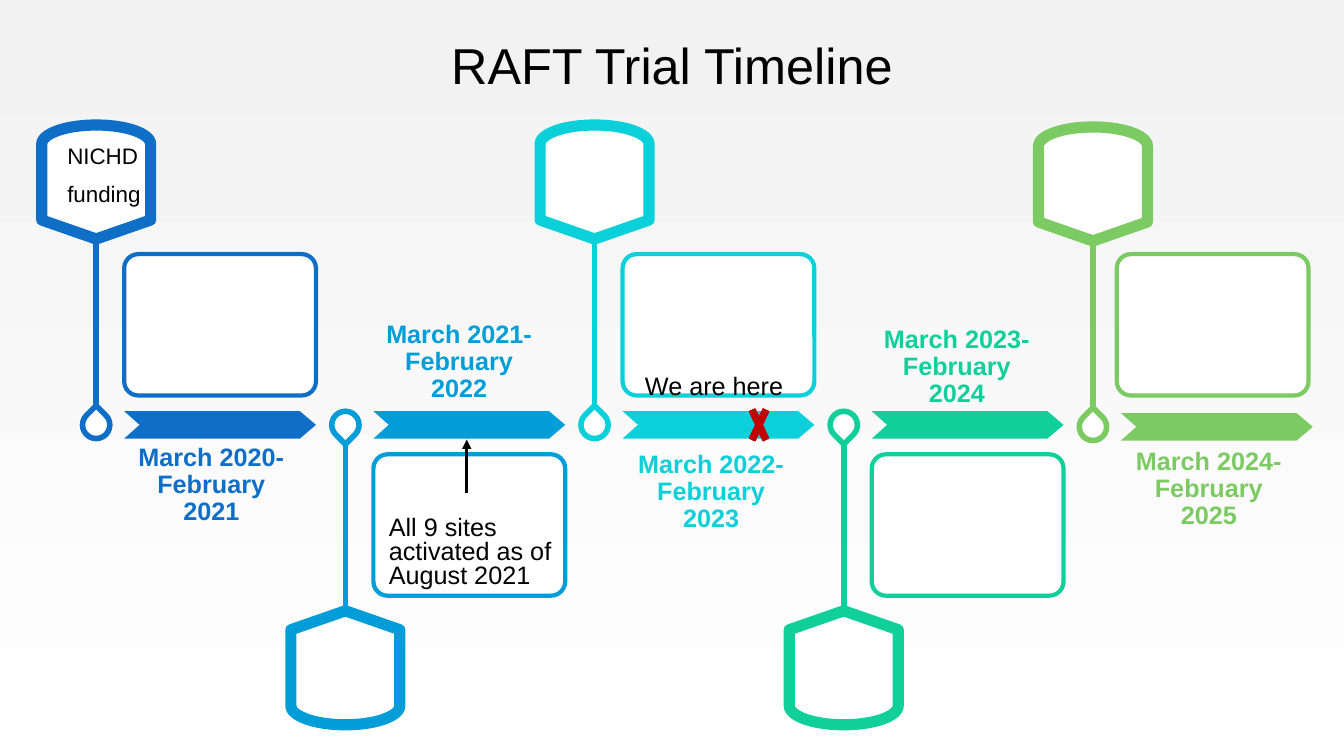
"""Build the trial timeline slide."""
from dataclasses import dataclass

from pptx import Presentation
from pptx import util as u
from pptx.dml.color import RGBColor
from pptx.enum import shapes, text
from pptx.oxml import ns
from lxml import etree

Pt = u.Pt


@dataclass(frozen=True)
class Theme:
    """Colours, font and type sizes of the slide."""
    font: str = "Arial"
    ink: str = "000000"
    paper: str = "FFFFFF"
    shade: str = "F2F2F2"
    alert: str = "C00000"
    title: float = 36
    body: float = 18
    small: float = 16


@dataclass(frozen=True)
class Period:
    """One year of the trial, with the nudges of its parts in points."""
    label: str
    color: str
    label_left: float
    label_top: float
    drop: float = 0
    card_shift: float = 0


THEME = Theme()
PERIODS = [
    Period("March 2020-February 2021", "0F6FC6", 20, 10.5),
    Period("March 2021-February 2022", "009DD9", 19, -77.5),
    Period("March 2022- February 2023", "0BD0D9", 21, 15.5),
    Period("March 2023-February 2024", "10CF9B", 18.5, -74),
    Period("March 2024-February 2025", "7CCA62", 20.5, 13.5, 1.4, -3),
]
FIRST_AXIS, PITCH, BAND_Y = 68.7, 178, 303.5
CARD_W, CARD_H, ARROW_H = 137, 101, 19.6


def rgb(color):
    """Turn a hex string into a colour."""
    return RGBColor.from_string(color)


def write(frame, content, size=THEME.body, color=THEME.ink, bold=False,
          align=text.PP_ALIGN.LEFT, spacing=0.9, before=10,
          anchor=text.MSO_ANCHOR.TOP):
    """Fill a text frame with formatted paragraphs, one per line of content."""
    frame.word_wrap = True
    frame.auto_size = text.MSO_AUTO_SIZE.NONE
    frame.vertical_anchor = anchor
    frame.text = content
    for paragraph in frame.paragraphs:
        paragraph.alignment = align
        paragraph.line_spacing = spacing
        paragraph.space_before = Pt(before)
        font = paragraph.runs[0].font
        font.name, font.size, font.bold = THEME.font, Pt(size), bold
        font.color.rgb = rgb(color)


def add_note(slide, box, content, **style):
    """Place a text box in the given box."""
    note = slide.shapes.add_textbox(*map(Pt, box))
    write(note.text_frame, content, **style)


def paint(shape, fill, line=None, weight=0):
    """Set fill and outline, without a shadow."""
    shape.shadow.inherit = False
    shape.fill.solid()
    shape.fill.fore_color.rgb = rgb(fill)
    if line:
        shape.line.color.rgb = rgb(line)
        shape.line.width = Pt(weight)
    else:
        shape.line.fill.background()


def add_centered(slide, kind, center, size, fill, line, weight, turn=0):
    """Add a preset shape around its centre."""
    (x, y), (width, height) = center, size
    shape = slide.shapes.add_shape(kind, Pt(x - width / 2), Pt(y - height / 2),
                                   Pt(width), Pt(height))
    shape.rotation = turn
    paint(shape, fill, line, weight)
    return shape


def add_line(slide, start, end, color, weight):
    """Add a straight line without a shadow."""
    line = slide.shapes.add_connector(shapes.MSO_CONNECTOR.STRAIGHT,
                                      *map(Pt, (*start, *end)))
    line.line.color.rgb = rgb(color)
    line.line.width = Pt(weight)
    etree.SubElement(line._element.spPr, ns.qn("a:effectLst"))
    return line


def add_band_arrow(slide, left, middle, color):
    """Draw the notched arrow of one period."""
    top, bottom = middle - ARROW_H / 2, middle + ARROW_H / 2
    neck, notch = left + CARD_W - 11.5, left + 11
    outline = [(neck, top), (left + CARD_W, middle), (neck, bottom),
               (left, bottom), (notch, middle)]
    builder = slide.shapes.build_freeform(Pt(left), Pt(top))
    builder.add_line_segments([(Pt(x), Pt(y)) for x, y in outline], close=True)
    paint(builder.convert_to_shape(), color)


def add_period(slide, period, axis, band_y, side):
    """Draw one period around its axis; side is -1 above the band, 1 below."""
    kinds = shapes.MSO_SHAPE
    y = band_y + period.drop
    color = period.color
    add_band_arrow(slide, axis + 20, y, color)
    add_centered(slide, kinds.FLOWCHART_DISPLAY, (axis, y + side * 173.5),
                 (81.4, 77.8), THEME.paper, color, 8, 180 - 90 * side)
    add_centered(slide, kinds.TEAR, (axis, y), (19.5, 19.5),
                 THEME.paper, color, 4, 225 - 90 * side)
    add_line(slide, (axis, y + side * 132.5), (axis, y + side * 13.5), color, 4)
    card_center = (axis + 20 + CARD_W / 2 + period.card_shift,
                   band_y + side * 71.5)
    card = add_centered(slide, kinds.ROUNDED_RECTANGLE, card_center,
                        (CARD_W, CARD_H), THEME.paper, color, 3)
    card.adjustments[0] = 0.1
    add_note(slide, (axis + period.label_left, band_y + period.label_top, 124.5, 60),
             period.label, color=color, bold=True, align=text.PP_ALIGN.CENTER)


def add_title(slide, box):
    """Place the slide title in the given box."""
    title = slide.shapes.title
    title.left, title.top, title.width, title.height = map(Pt, box)
    write(title.text_frame, "RAFT Trial Timeline", size=THEME.title, before=0,
          align=text.PP_ALIGN.CENTER, anchor=text.MSO_ANCHOR.MIDDLE)


def add_remarks(slide, axis, band_y):
    """Add the funding, site and current-position remarks."""
    add_note(slide, (axis - 27.7, band_y - 203.5, 136, 60), "NICHD\nfunding",
             size=THEME.small)
    add_note(slide, (axis + 202, band_y + 62.3, 136, 60),
             "All 9 sites activated as of August 2021", spacing=0.8)
    add_note(slide, (axis + 373.4, band_y - 38.5, 136, 26), "We are here",
             spacing=0.8, align=text.PP_ALIGN.CENTER)
    add_centered(slide, shapes.MSO_SHAPE.MATH_MULTIPLY, (axis + 473.5, band_y),
                 (18.7, 40.3), THEME.alert, THEME.alert, 1)
    pointer = add_line(slide, (axis + 264.7, band_y + 48.6),
                       (axis + 264.7, band_y + 10.5), THEME.ink, 2.25)
    etree.SubElement(pointer.line._get_or_add_ln(), ns.qn("a:tailEnd"),
                     type="triangle")


def add_background(slide):
    """Shade the slide from grey at the top to white."""
    fill = slide.background.fill
    fill.gradient()
    fill.gradient_angle = 270
    for stop, color, position in zip(fill.gradient_stops,
                                     (THEME.shade, THEME.paper), (0.01, 1)):
        stop.color.rgb = rgb(color)
        stop.position = position


def main():
    """Build and save the presentation."""
    deck = Presentation()
    deck.slide_width, deck.slide_height = Pt(960), Pt(540)
    slide = deck.slides.add_slide(deck.slide_layouts[5])
    add_background(slide)
    add_title(slide, (66, 29, 828, 40))
    for index, period in enumerate(PERIODS):
        add_period(slide, period, FIRST_AXIS + index * PITCH, BAND_Y,
                   1 if index % 2 else -1)
    add_remarks(slide, FIRST_AXIS, BAND_Y)
    deck.save("out.pptx")


if __name__ == "__main__":
    main()
